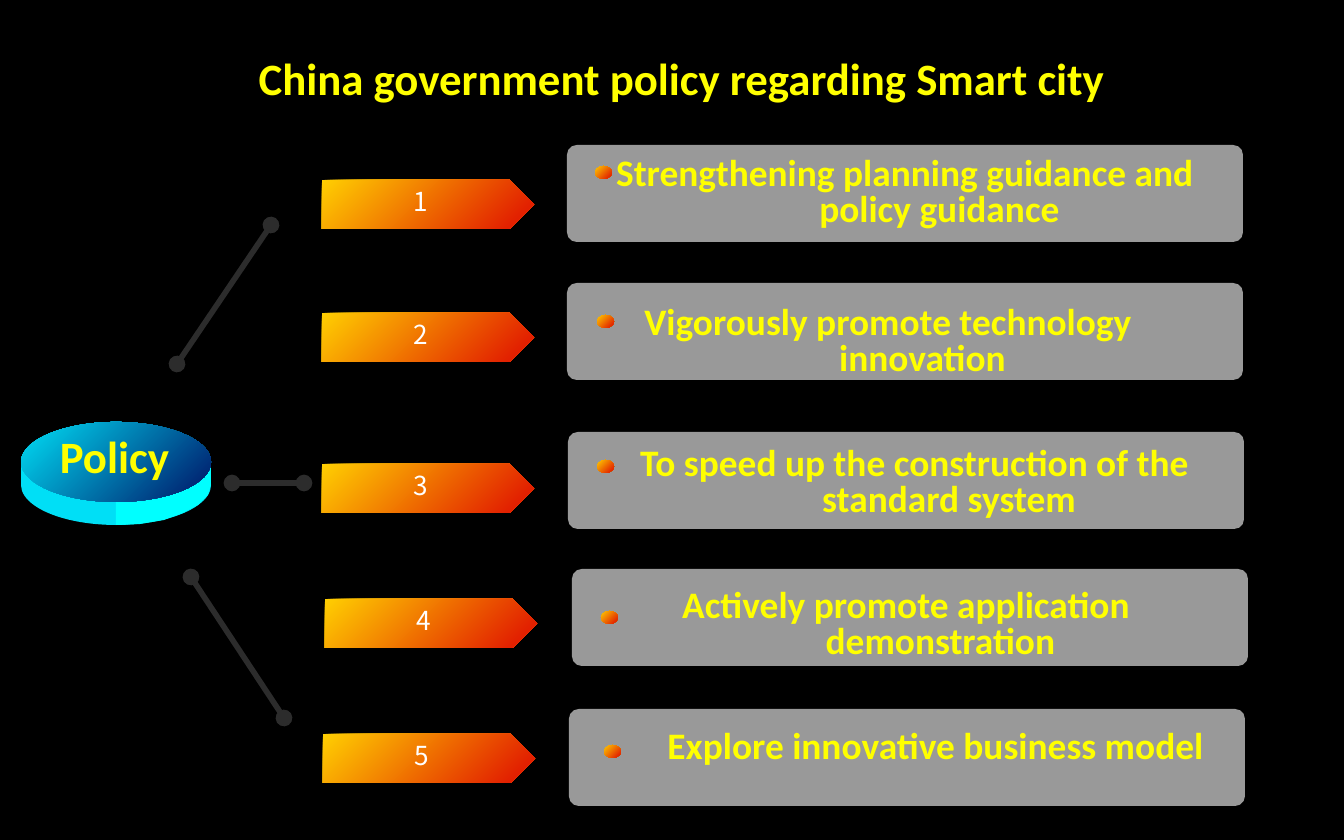
"""Build the slide on China's smart city policy measures."""
from dataclasses import dataclass

from lxml import etree
from pptx import Presentation
from pptx.dml.color import RGBColor
from pptx.enum.shapes import MSO_CONNECTOR, MSO_SHAPE
from pptx.enum.text import PP_ALIGN
from pptx.oxml.ns import qn
from pptx.util import Emu, Pt

EMU_PER_PX = 914400 / 134.4
ROUNDED = MSO_SHAPE.ROUNDED_RECTANGLE
PENTAGON = MSO_SHAPE.PENTAGON
OVAL = MSO_SHAPE.OVAL
RECTANGLE = MSO_SHAPE.RECTANGLE
STRAIGHT = MSO_CONNECTOR.STRAIGHT
CENTER = PP_ALIGN.CENTER

BLACK = RGBColor(0x00, 0x00, 0x00)
WHITE = RGBColor(0xFF, 0xFF, 0xFF)
YELLOW = RGBColor(0xFF, 0xFF, 0x00)
PANEL_GRAY = RGBColor(0x99, 0x99, 0x99)
SPOKE_GRAY = RGBColor(0x2C, 0x2C, 0x2C)
AMBER = RGBColor(0xFF, 0xCF, 0x01)
RED = RGBColor(0xE2, 0x20, 0x00)
CYAN = RGBColor(0x00, 0xDF, 0xF6)
BRIGHT_CYAN = RGBColor(0x00, 0xFF, 0xFF)
NAVY = RGBColor(0x00, 0x27, 0x74)

HEADING = {"name": "Calibri", "size": Pt(24), "bold": True}
MEASURE = {"name": "Calibri", "size": Pt(20), "bold": True}
NUMBER = {"name": "Noto Sans CJK SC", "size": Pt(14), "bold": False}
HANGING_INDENT = 69


@dataclass(frozen=True)
class Box:
    left: int
    top: int
    width: int
    height: int

    def emu(self):
        return [px(n) for n in (self.left, self.top, self.width, self.height)]


@dataclass(frozen=True)
class Measure:
    text: str
    panel: Box
    banner: Box
    bullet: Box
    caption: Box


@dataclass(frozen=True)
class Spoke:
    x1: int
    y1: int
    x2: int
    y2: int


def panel(left: int, top: int) -> Box:
    return Box(left, top, 676, 97)


def banner(left: int, top: int) -> Box:
    return Box(left, top, 212, 49)


def bullet(left: int, top: int) -> Box:
    return Box(left, top, 17, 13)


MEASURES = (
    Measure("Strengthening planning guidance and policy guidance",
            panel(567, 145), banner(322, 180), bullet(595, 166), Box(567, 151, 676, 86)),
    Measure("Vigorously promote technology innovation",
            panel(567, 283), banner(322, 313), bullet(597, 315), Box(589, 300, 598, 86)),
    Measure("To speed up the construction of the standard system",
            panel(568, 432), banner(322, 464), bullet(597, 460), Box(617, 441, 595, 86)),
    Measure("Actively promote application demonstration",
            panel(572, 569), banner(325, 599), bullet(601, 611), Box(607, 583, 598, 86)),
    Measure("Explore innovative business model",
            panel(569, 709), banner(323, 734), bullet(604, 745), Box(638, 724, 595, 86)),
)
SPOKES = (Spoke(177, 364, 271, 225), Spoke(232, 483, 304, 483), Spoke(191, 577, 284, 718))


def px(length: int) -> Emu:
    return Emu(round(length * EMU_PER_PX))


def add_solid(shapes, preset, box: Box, color: RGBColor):
    shape = shapes.add_shape(preset, *box.emu())
    shape.shadow.inherit = False
    shape.line.fill.background()
    shape.fill.solid()
    shape.fill.fore_color.rgb = color
    return shape


def add_gradient(shapes, preset, box: Box, start: RGBColor, end: RGBColor):
    shape = add_solid(shapes, preset, box, start)
    shape.fill.gradient()
    shape.fill.gradient_angle = 315
    for stop, color, position in zip(shape.fill.gradient_stops, (start, end), (0, 0.9)):
        stop.color.rgb = color
        stop.position = position
    return shape


def add_text(shapes, box: Box, text: str, font_format: dict, color: RGBColor, wrap: bool = True):
    frame = shapes.add_textbox(*box.emu()).text_frame
    frame.word_wrap = wrap
    paragraph = frame.paragraphs[0]
    paragraph.alignment = CENTER
    run = paragraph.add_run()
    run.text = text
    for attribute, value in font_format.items():
        setattr(run.font, attribute, value)
    run.font.color.rgb = color
    return paragraph


def add_spoke(shapes, spoke: Spoke) -> None:
    ends = (px(n) for n in (spoke.x1, spoke.y1, spoke.x2, spoke.y2))
    connector = shapes.add_connector(STRAIGHT, *ends)
    connector.line.color.rgb = SPOKE_GRAY
    connector.line.width = Pt(3)
    properties = connector._element.spPr
    for tag in ("a:headEnd", "a:tailEnd"):
        etree.SubElement(properties.find(qn("a:ln")), qn(tag), type="oval")
    etree.SubElement(properties, qn("a:effectLst"))


def add_measure(shapes, number: int, measure: Measure) -> None:
    add_solid(shapes, ROUNDED, measure.panel, PANEL_GRAY).adjustments[0] = 0.1
    add_gradient(shapes, PENTAGON, measure.banner, AMBER, RED)
    label = Box(measure.banner.left + 11, measure.banner.top - 1, 176, 46)
    add_text(shapes, label, str(number), NUMBER, WHITE)
    caption = add_text(shapes, measure.caption, measure.text, MEASURE, YELLOW)
    caption.line_spacing = 0.8
    indent = px(HANGING_INDENT)
    for attribute, value in {"marL": indent, "indent": -indent}.items():
        caption._p.get_or_add_pPr().set(attribute, str(value))
    add_gradient(shapes, OVAL, measure.bullet, AMBER, RED)


def add_policy_disc(shapes) -> None:
    add_solid(shapes, OVAL, Box(21, 445, 190, 80), CYAN)
    add_solid(shapes, RECTANGLE, Box(21, 462, 190, 23), CYAN)
    rim = shapes.build_freeform(px(116), px(462), scale=1.0)
    rim_points = ((211, 462), (211, 485), (208, 495), (198, 505), (183, 513),
                  (164, 520), (140, 524), (116, 525))
    rim.add_line_segments([(px(x), px(y)) for x, y in rim_points])
    bright_side = rim.convert_to_shape()
    bright_side.shadow.inherit = False
    bright_side.line.fill.background()
    bright_side.fill.solid()
    bright_side.fill.fore_color.rgb = BRIGHT_CYAN
    add_gradient(shapes, OVAL, Box(21, 422, 190, 80), CYAN, NAVY)
    add_text(shapes, Box(15, 422, 199, 67), "Policy", HEADING, YELLOW)


def main() -> None:
    deck = Presentation()
    deck.slide_width, deck.slide_height = px(1344), px(840)
    slide = deck.slides.add_slide(deck.slide_layouts[6])
    slide.background.fill.solid()
    slide.background.fill.fore_color.rgb = BLACK
    shapes = slide.shapes
    add_text(shapes, Box(236, 44, 891, 67), "China government policy regarding Smart city",
             HEADING, YELLOW, wrap=False)
    for number, measure in enumerate(MEASURES, start=1):
        add_measure(shapes, number, measure)
    for spoke in SPOKES:
        add_spoke(shapes, spoke)
    add_policy_disc(shapes)
    deck.save("out.pptx")


if __name__ == "__main__":
    main()
